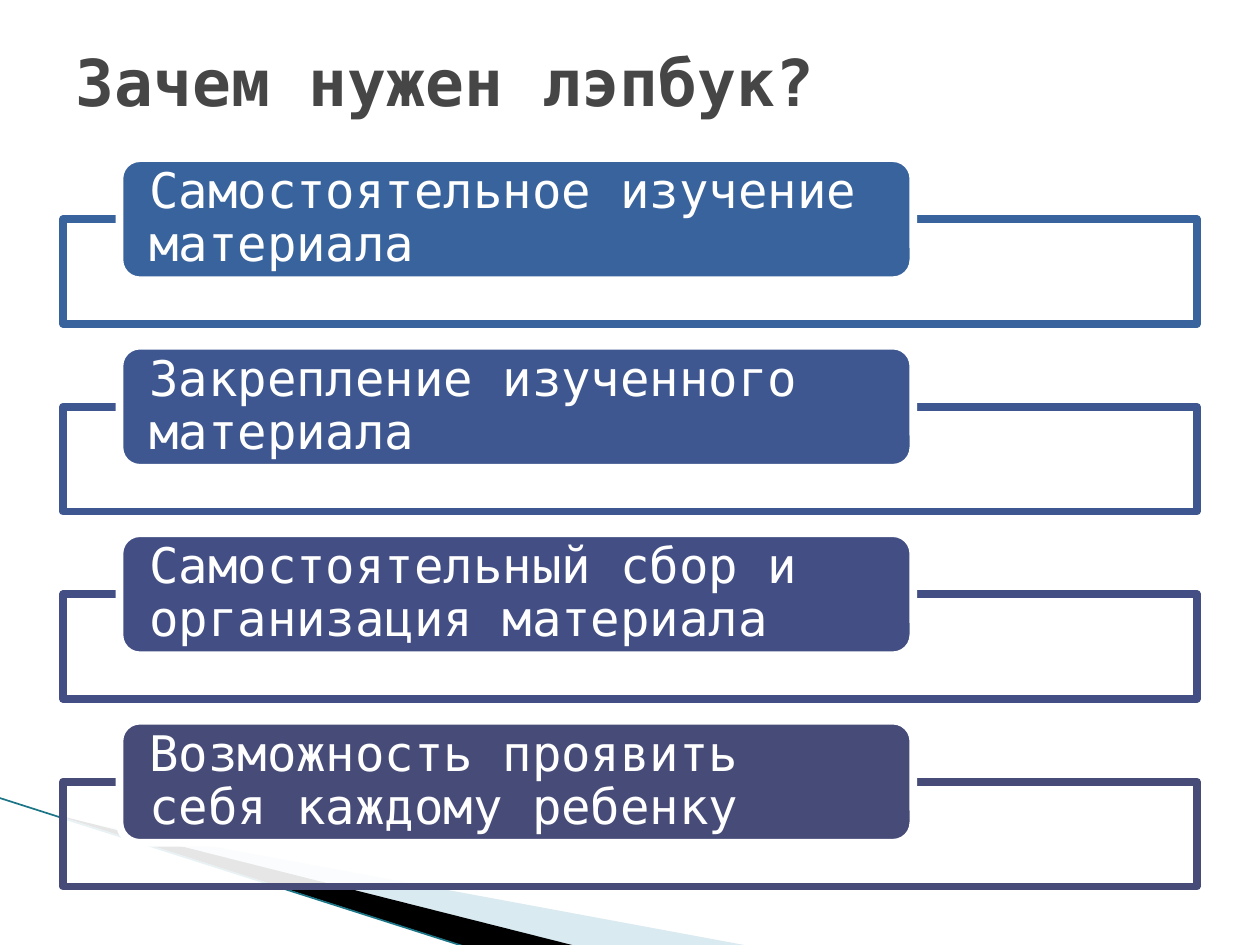
from lxml.etree import SubElement
from pptx import Presentation
from pptx.dml.color import RGBColor as Rgb
from pptx.enum.shapes import MSO_CONNECTOR as Connector, MSO_SHAPE as Shape
from pptx.enum.text import MSO_ANCHOR as Anchor, PP_ALIGN as Align
from pptx.oxml.ns import qn
from pptx.util import Cm, Pt

COLORS = {
    "white": "FFFFFF", "title": "464646", "black": "000000",
    "pale": "A0CBDC", "teal": "1B7587",
}
FONT = "DejaVu Sans Mono"
TITLE_FORMAT = {"name": FONT, "size": Pt(36.9), "bold": True}
LABEL_FORMAT = {"name": FONT, "size": Pt(28), "bold": False}
REASONS = [
    ("Самостоятельное изучение материала", "39639D"),
    ("Закрепление изученного материала", "3E5790"),
    ("Самостоятельный сбор и организация материала", "434F84"),
    ("Возможность проявить себя каждому ребенку", "474B78"),
]


def paint(shape, fill, line=None, opacity=100):
    shape.shadow.inherit = False
    shape.fill.solid()
    shape.fill.fore_color.rgb = Rgb.from_string(fill)
    if opacity < 100:
        color = shape.fill._xPr.find(qn("a:solidFill"))[0]
        SubElement(color, qn("a:alpha"), val=str(opacity * 1000))
    if line:
        shape.line.color.rgb = Rgb.from_string(line)
        shape.line.width = Pt(4.33)
    else:
        shape.line.fill.background()


def write(shape, text, formats, color, align=Align.LEFT):
    frame = shape.text_frame
    frame.word_wrap = True
    frame.vertical_anchor = Anchor.MIDDLE
    para = frame.paragraphs[0]
    para.alignment = align
    span = para.add_run()
    span.text = text
    for name, value in formats.items():
        setattr(span.font, name, value)
    span.font.color.rgb = Rgb.from_string(color)
    return frame, para


def add_wedge(page, left, top, points, fill, opacity=100):
    corners = [(Cm(left + x), Cm(top + y)) for x, y in points]
    builder = page.shapes.build_freeform(*corners[0], scale=1.0)
    builder.add_line_segments(corners[1:], close=True)
    paint(builder.convert_to_shape(), fill, opacity=opacity)


def add_corner(page, left, top):
    add_wedge(page, left, top, [(1.4, 0.45), (15.11, 2.99), (11.58, 2.99), (1.4, 0.43)],
              COLORS["pale"], 40)
    add_wedge(page, left, top, [(1.35, 0.4), (11.61, 2.99), (9.45, 3.02), (1.37, 0.43)],
              COLORS["black"])
    edge = page.shapes.add_connector(
        Connector.STRAIGHT, Cm(left - 0.03), Cm(top), Cm(left + 9.42), Cm(top + 3.02))
    edge.line.color.rgb = Rgb.from_string(COLORS["teal"])
    edge.line.width = Pt(0.95)
    SubElement(edge._element.spPr, qn("a:effectLst"))


def add_title(page, left, top, width, height):
    title = page.shapes.title
    title.left, title.top, title.width, title.height = map(Cm, (left, top, width, height))
    write(title, "Зачем нужен лэпбук?", TITLE_FORMAT, COLORS["title"])


def add_reason(page, left, top, width, text, color):
    box = page.shapes.add_shape(
        Shape.RECTANGLE, Cm(left), Cm(top + 1.23), Cm(width), Cm(2.11))
    paint(box, COLORS["white"], color, 90)
    label = page.shapes.add_shape(
        Shape.ROUNDED_RECTANGLE, Cm(left + 1.14), Cm(top), Cm(width * 0.7), Cm(2.46))
    paint(label, color, COLORS["white"])
    frame, para = write(label, text, LABEL_FORMAT, COLORS["white"])
    frame.margin_left = frame.margin_right = Cm(0.48)
    frame.margin_top = frame.margin_bottom = 0
    para.line_spacing = 0.9


def add_reasons(page, left, top, width, pitch):
    for row, (text, color) in enumerate(REASONS):
        add_reason(page, left, top + row * pitch, width, text, color)


def main():
    deck = Presentation()
    deck.slide_width, deck.slide_height = Cm(25.4), Cm(19.05)
    page = deck.slides.add_slide(deck.slide_layouts[5])
    page.background.fill.solid()
    page.background.fill.fore_color.rgb = Rgb.from_string(COLORS["white"])
    add_corner(page, 0, 16.08)
    add_reasons(page, 1.27, 3.19, 22.86, 3.78)
    add_title(page, 1.27, 0.76, 22.86, 1.75)
    deck.save("out.pptx")


if __name__ == "__main__":
    main()
